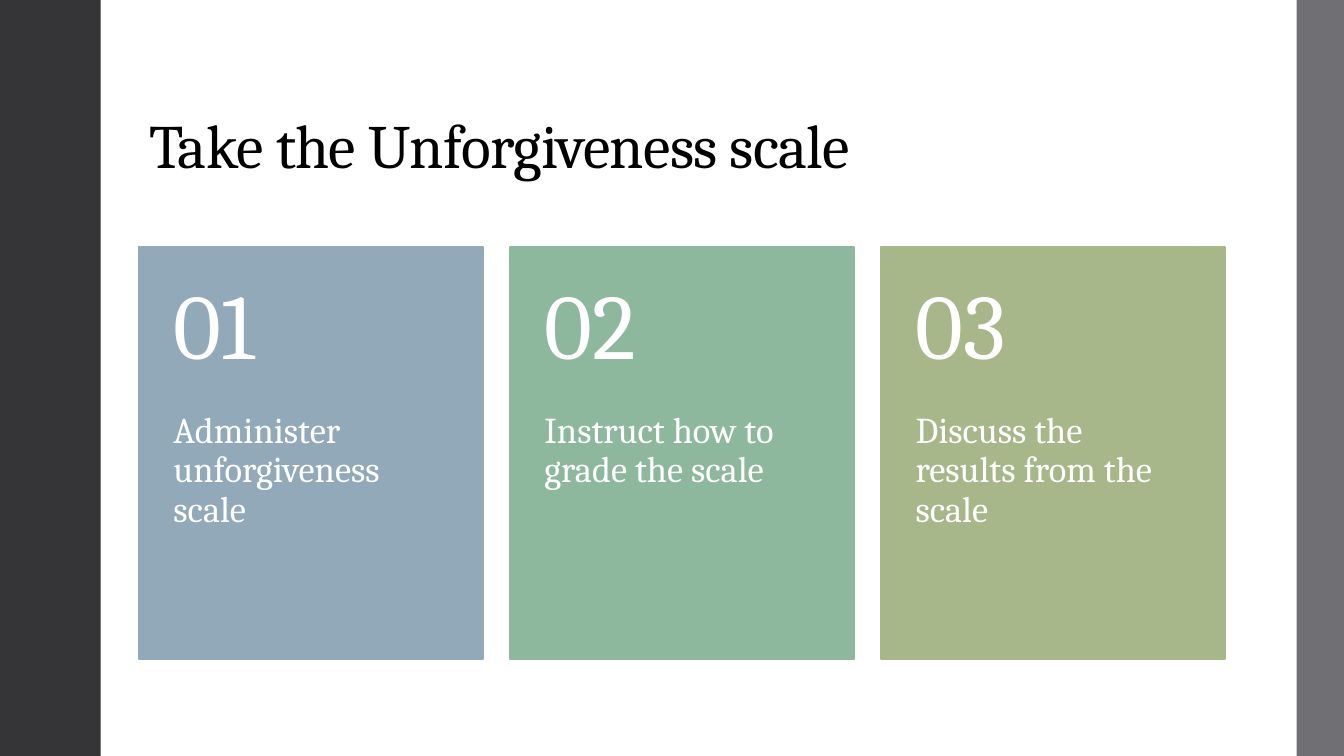
from pptx import Presentation
from pptx import util as u
from pptx.dml.color import RGBColor
from pptx.enum import shapes, text

PX = 9144  # 100 px to the inch


def rgb(code):
    return RGBColor.from_string(code)


class Deck:
    font = "Cambria"
    white = "FFFFFF"

    def __init__(self, wide, high):
        self.prs = Presentation()
        self.prs.slide_width = wide * PX
        self.prs.slide_height = high * PX
        self.slide = self.prs.slides.add_slide(self.prs.slide_layouts[6])

    def rect(self, x, y, w, h, fill, edge=False):
        box = self.slide.shapes.add_shape(
            shapes.MSO_SHAPE.RECTANGLE, x * PX, y * PX, w * PX, h * PX)
        box.shadow.inherit = False
        box.fill.solid()
        box.fill.fore_color.rgb = rgb(fill)
        if edge:
            box.line.color.rgb = rgb(fill)
            box.line.width = u.Pt(1.1)
        else:
            box.line.fill.background()

    def label(self, x, y, w, h, words, size, color, pad, anchor):
        box = self.slide.shapes.add_textbox(x * PX, y * PX, w * PX, h * PX)
        frame = box.text_frame
        frame.word_wrap = True
        frame.vertical_anchor = anchor
        left, top, right, foot = (n * PX for n in pad)
        frame.margin_left, frame.margin_right = left, right
        frame.margin_top, frame.margin_bottom = top, foot
        para = frame.paragraphs[0]
        run = para.add_run()
        run.text = words
        para.line_spacing = 0.9
        para.font.name = self.font
        para.font.size = u.Pt(size)
        para.font.color.rgb = rgb(color)
        return run

    def card(self, x, y, num, words, fill):
        w, head, body = 341, 164, 246
        self.rect(x, y, w, 409, fill, edge=True)
        self.label(x, y + head, w, body, words, 26, self.white,
                   (34, 0, 34, 36), text.MSO_ANCHOR.TOP)
        self.label(x, y, w, head, f"{num:02}", 66, self.white,
                   (34, 18, 34, 18), text.MSO_ANCHOR.MIDDLE)


def main():
    deck = Deck(1333, 750)

    # Page panel and side bars
    deck.rect(0, 0, 1333, 750, deck.white)
    deck.rect(0, 0, 100, 750, "353537")
    deck.rect(1286, 0, 47, 750, "6F6F74")

    # Title, set slightly tight
    title = deck.label(138, 40, 1078, 145, "Take the Unforgiveness scale", 44,
                       "000000", (10, 5, 10, 5), text.MSO_ANCHOR.BOTTOM)
    title._r.get_or_add_rPr().set("spc", "-50")

    # Step cards
    steps = [
        ("Administer unforgiveness scale", "92A9B9"),
        ("Instruct how to grade the scale", "8EB89E"),
        ("Discuss the results from the scale", "A7B789"),
    ]
    left, top, pitch = 138, 245, 368
    for i, (words, fill) in enumerate(steps):
        deck.card(left + i * pitch, top, i + 1, words, fill)

    deck.prs.save("out.pptx")


if __name__ == "__main__":
    main()
